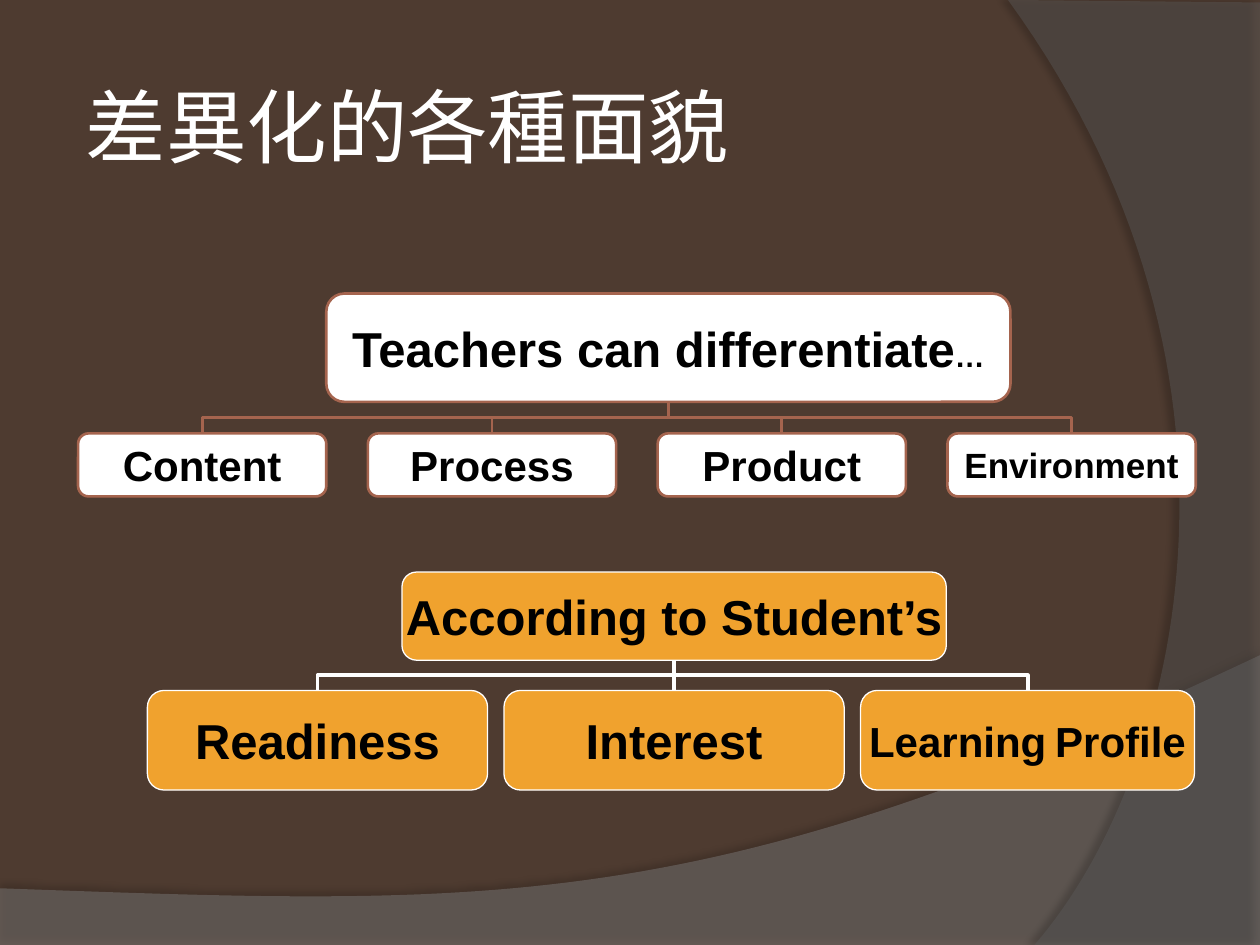
from lxml import etree
from pptx import Presentation
from pptx.dml.color import RGBColor
from pptx.enum.shapes import MSO_CONNECTOR as CONNECTOR, MSO_SHAPE as SHAPE
from pptx.enum.text import MSO_ANCHOR as ANCHOR, PP_ALIGN as ALIGN
from pptx.oxml import parse_xml
from pptx.oxml.ns import nsdecls, qn
from pptx.util import Inches, Pt

COLORS = {name: RGBColor.from_string(value) for name, value in {
    "brown": "4E3B30", "wave": "7F7F7F", "arc": "5E5E5E", "white": "FFFFFF",
    "black": "000000", "orange": "F0A22E", "rust": "A5644E"}.items()}
CURVE_STEPS = 60

presentation = Presentation()
presentation.slide_width, presentation.slide_height = Inches(10), Inches(7.5)
slide = presentation.slides.add_slide(presentation.slide_layouts[6])
slide.background.fill.solid()
slide.background.fill.fore_color.rgb = COLORS["brown"]

# Background sweeps: straight corners, closed by one Bezier curve
# (corners, Bezier points, colour, opacity %, shadow opacity %, distance, direction)
sweeps = [
    ([(0, 7.05), (0, 7.51), (10, 7.51)],
     [(10, 5.2), (5.59, 7.29), (3.91, 7.19), (0, 7.05)], "wave", 45, 35, 3.5, 270),
    ([(10, 0.02), (10, 7.5)],
     [(8.21, 7.5), (9.35, 6.19), (10.18, 3), (8, 0)], "arc", 40, 45, 4, 180),
]
for corners, bezier, color, opacity, shadow_opacity, distance, direction in sweeps:
    points = list(corners)
    for step in range(CURVE_STEPS + 1):
        t = step / CURVE_STEPS
        weights = ((1 - t) ** 3, 3 * t * (1 - t) ** 2, 3 * t ** 2 * (1 - t), t ** 3)
        points.append(tuple(sum(w * p[axis] for w, p in zip(weights, bezier))
                            for axis in (0, 1)))
    points = [(Inches(x), Inches(y)) for x, y in points]
    builder = slide.shapes.build_freeform(*points[0])
    builder.add_line_segments(points[1:], close=True)
    shape = builder.convert_to_shape()
    shape.line.fill.background()
    shape.fill.solid()
    shape.fill.fore_color.rgb = COLORS[color]
    fill_color = shape._element.spPr.find(qn("a:solidFill"))[0]
    etree.SubElement(fill_color, qn("a:alpha")).set("val", str(opacity * 1000))
    shape._element.spPr.append(parse_xml(
        f'<a:effectLst {nsdecls("a")}><a:outerShdw blurRad="{Pt(4)}" dist="{Pt(distance)}" '
        f'dir="{direction * 60000}" rotWithShape="0"><a:srgbClr val="000000">'
        f'<a:alpha val="{shadow_opacity * 1000}"/></a:srgbClr></a:outerShdw></a:effectLst>'))

title = slide.shapes.add_textbox(Inches(0.63), Inches(0.33), Inches(8.75), Inches(1.33))
frame = title.text_frame
frame.word_wrap = True
frame.vertical_anchor = ANCHOR.MIDDLE
frame.margin_left = frame.margin_right = Inches(0.05)
frame.text = "差異化的各種面貌"
font = frame.paragraphs[0].runs[0].font
font.name, font.size, font.color.rgb = "Lato", Pt(46), COLORS["white"]


def add_box(box, runs, style):
    """Add a rounded box; runs are (text, size) pairs."""
    shape = slide.shapes.add_shape(SHAPE.ROUNDED_RECTANGLE, *map(Inches, box))
    shape.shadow.inherit = False
    shape.fill.solid()
    shape.fill.fore_color.rgb = COLORS[style["fill"]]
    shape.line.color.rgb = COLORS[style["line"]]
    shape.line.width = Pt(style["border"])
    frame = shape.text_frame
    frame.word_wrap = False
    frame.vertical_anchor = ANCHOR.MIDDLE
    frame.margin_left = frame.margin_right = Inches(style["margin"])
    frame.margin_top = frame.margin_bottom = Inches(style["margin"] / 2)
    paragraph = frame.paragraphs[0]
    paragraph.alignment = ALIGN.CENTER
    for text, size in runs:
        run = paragraph.add_run()
        run.text = text
        run.font.name, run.font.size, run.font.bold = "Arial", Pt(size), True
        run.font.color.rgb = COLORS["black"]


def add_branch(parent_x, top, child_x, bottom, style):
    """Add an elbow that leaves the parent downwards: a turned, level elbow."""
    middle_x, middle_y = (parent_x + child_x) / 2, (top + bottom) / 2
    half_width, half_height = (bottom - top) / 2, abs(child_x - parent_x) / 2
    to_right = child_x > parent_x
    if to_right:
        half_width = -half_width
    branch = slide.shapes.add_connector(
        CONNECTOR.ELBOW, Inches(middle_x - half_width), Inches(middle_y - half_height),
        Inches(middle_x + half_width), Inches(middle_y + half_height))
    properties = branch._element.spPr
    properties.find(qn("a:xfrm")).set("rot", str((270 if to_right else 90) * 60000))
    branch.line.color.rgb = COLORS[style["line"]]
    branch.line.width = Pt(style["branch"])
    etree.SubElement(properties, qn("a:effectLst"))


student_style = {"fill": "orange", "line": "white", "border": 0.75, "branch": 2.25,
                 "margin": 0.07}
teacher_style = {"fill": "white", "line": "rust", "border": 1.5, "branch": 1.5,
                 "margin": 0.1}
# (style, parent box, parent runs, first child box, child pitch, children (width, runs))
charts = [
    (student_style, (3.19, 4.54, 4.32, 0.7), [("According to Student’s", 28)],
     (1.17, 5.48, 0.79), 2.83,
     [(2.7, [("Readiness", 28)]), (2.7, [("Interest", 28)]),
      (2.65, [("Learning", 24), (" ", 18), ("Profile", 24)])]),
    (teacher_style, (2.59, 2.33, 5.43, 0.86),
     [("Teachers can differentiate", 28), ("…", 17)],
     (0.62, 3.44, 0.5), 2.3,
     [(1.97, [("Content", 24)]), (1.97, [("Process", 24)]),
      (1.97, [("Product", 24)]), (1.97, [("Environment", 20)])]),
]
for style, parent, parent_runs, (left, top, height), pitch, children in charts:
    parent_x, parent_bottom = parent[0] + parent[2] / 2, parent[1] + parent[3]
    lefts = [left + pitch * index for index in range(len(children))]
    for child_left, (width, _) in zip(lefts, children):
        add_branch(parent_x, parent_bottom, child_left + width / 2, top, style)
    add_box(parent, parent_runs, style)
    for child_left, (width, runs) in zip(lefts, children):
        add_box((child_left, top, width, height), runs, style)

presentation.save("out.pptx")
